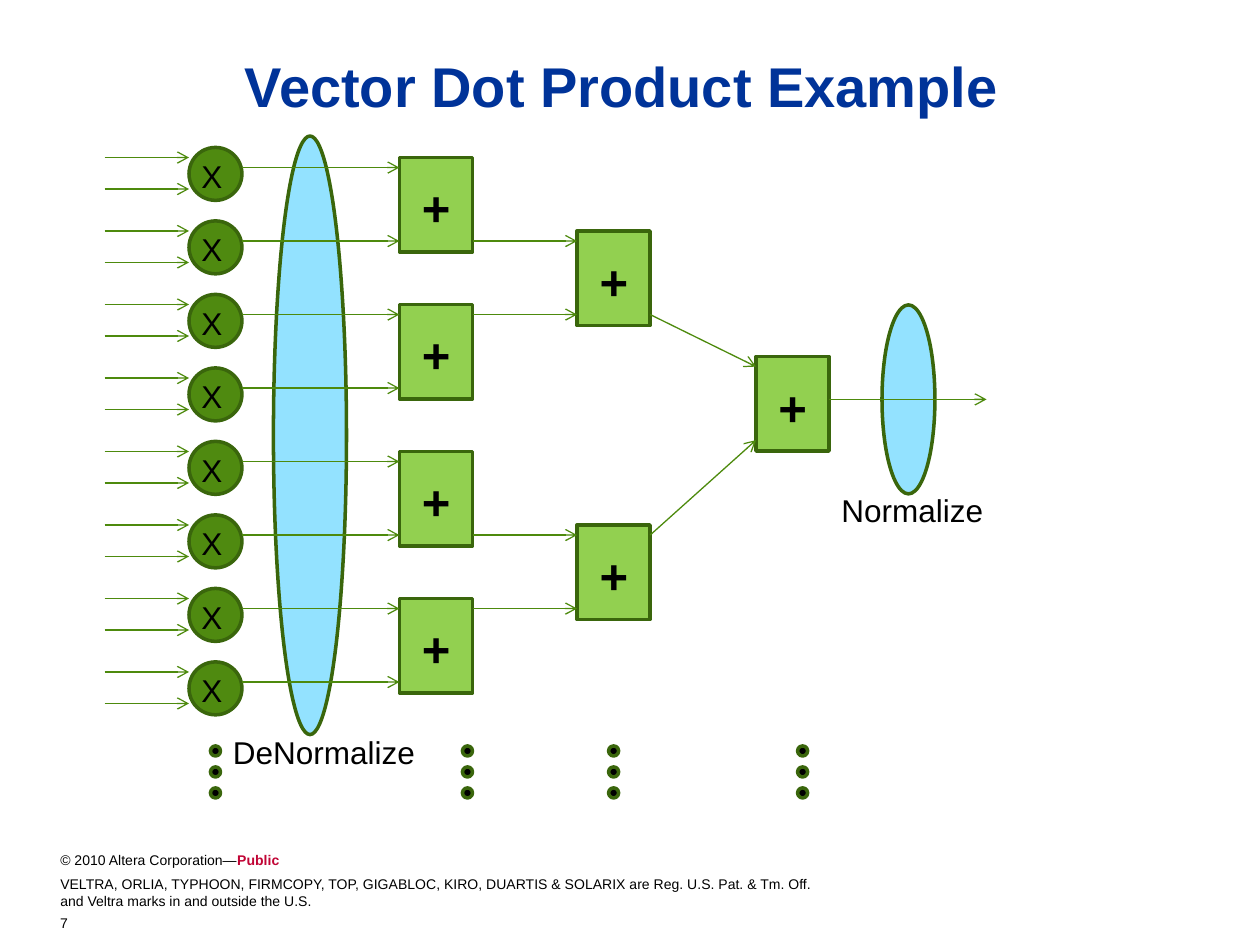
from lxml.etree import SubElement
from pptx import Presentation
from pptx.dml.color import RGBColor
from pptx.enum.shapes import MSO_CONNECTOR as CONNECTOR, MSO_SHAPE as SHAPE
from pptx.enum.text import MSO_ANCHOR as ANCHOR, PP_ALIGN as ALIGN
from pptx.oxml.ns import qn
from pptx.util import Inches, Pt

BLACK, NAVY, CRIMSON = "000000", "003399", "C10435"
SKY, LEAF, MOSS = "93E2FF", "92D050", "4F8A10"
OUTLINE, WIRE = "3A660C", "4D8A0D"

PITCH = 7 / 12               # distance between neighbouring products
MULTIPLIERS = 8
MULTIPLIER_SIZE = 0.42
ADDER_WIDTH, ADDER_HEIGHT = 0.58, 0.75
PORT_TOP = 0.08              # first port below the top of an adder
PORT_BOTTOM = PORT_TOP + PITCH


def color(hex_string):
    return RGBColor.from_string(hex_string)


def add_run(paragraph, text, size, hex_color=BLACK, bold=False):
    run = paragraph.add_run()
    run.text = text
    font = run.font
    font.name, font.size, font.bold = "Arial", Pt(size), bold
    font.color.rgb = color(hex_color)


def add_text(shapes, left, top, width, height):
    """Add an empty wrapping text box and return its first paragraph."""
    frame = shapes.add_textbox(*map(Inches, (left, top, width, height))).text_frame
    frame.word_wrap = True
    paragraph = frame.paragraphs[0]
    paragraph.line_spacing = 1.05
    return paragraph


def add_outlined(shapes, preset, left, top, width, height, fill):
    shape = shapes.add_shape(preset, *map(Inches, (left, top, width, height)))
    shape.shadow.inherit = False
    shape.fill.solid()
    shape.fill.fore_color.rgb = color(fill)
    shape.line.color.rgb = color(OUTLINE)
    shape.line.width = Pt(2)


def add_arrow(slide, x1, y1, x2, y2):
    arrow = slide.shapes.add_connector(CONNECTOR.STRAIGHT, *map(Inches, (x1, y1, x2, y2)))
    arrow.line.color.rgb = color(WIRE)
    arrow.line.width = Pt(0.75)
    SubElement(arrow.line._get_or_add_ln(), qn("a:tailEnd"), type="arrow")
    SubElement(arrow._element.spPr, qn("a:effectLst"))


def add_title(slide, left, top, width, height):
    title = slide.shapes.title
    title.left, title.top, title.width, title.height = map(Inches, (left, top, width, height))
    frame = title.text_frame
    frame.word_wrap = True
    frame.vertical_anchor = ANCHOR.TOP
    frame.margin_top = Inches(0.11)
    paragraph = frame.paragraphs[0]
    paragraph.alignment = ALIGN.CENTER
    add_run(paragraph, "Vector Dot Product Example", 32, NAVY, True)


def add_footer(slide, left, top):
    rights = add_text(slide.shapes, left, top, 4.65, 0.42)
    add_run(rights, "© 2010 Altera Corporation—", 8)
    add_run(rights, "Public", 8, CRIMSON, True)
    marks = add_text(slide.shapes, left, top + 0.19, 7.18, 0.37)
    add_run(marks, "VELTRA, ORLIA, TYPHOON, FIRMCOPY, TOP, GIGABLOC, KIRO, DUARTIS & SOLARIX "
                   "are Reg. U.S. Pat. & Tm. Off.", 8)
    marks.add_line_break()
    add_run(marks, "and Veltra marks in and outside the U.S.", 8)
    add_run(add_text(slide.shapes, left, top + 0.5, 0.76, 0.31), "7", 8)


def add_multiplier(slide, left, top):
    """Draw one multiplier with its two inputs."""
    group = slide.shapes.add_group_shape().shapes
    add_outlined(group, SHAPE.OVAL, left, top, MULTIPLIER_SIZE, MULTIPLIER_SIZE, MOSS)
    add_run(add_text(group, left, top + 0.01, 0.83, 0.5), "X", 18)
    for port in (0.08, 0.33):
        add_arrow(slide, left - 0.67, top + port, left, top + port)


def add_adder(slide, left, top):
    group = slide.shapes.add_group_shape().shapes
    add_outlined(group, SHAPE.RECTANGLE, left, top, ADDER_WIDTH, ADDER_HEIGHT, LEAF)
    add_run(add_text(group, left + 0.08, top + 0.09, 0.58, 0.57), "+", 28, bold=True)


def add_adder_stage(slide, left, top, count, source_right):
    """Stack adders two products apart, each fed by two level arrows."""
    for index in range(count):
        adder_top = top + index * PITCH * (8 / count)
        add_adder(slide, left, adder_top)
        for port in (PORT_TOP, PORT_BOTTOM):
            add_arrow(slide, source_right, adder_top + port, left, adder_top + port)


def add_adder_tree(slide, left, top):
    second, last = left + 1.41, left + 2.83
    second_top, last_top = top + PITCH, top + 1.58
    add_adder_stage(slide, left, top, 4, left - 1.25)
    add_adder_stage(slide, second, second_top, 2, left + ADDER_WIDTH)
    add_adder(slide, last, last_top)
    second_right = second + ADDER_WIDTH
    add_arrow(slide, second_right, second_top + PORT_BOTTOM, last, last_top + PORT_TOP)
    add_arrow(slide, second_right, second_top + 4 * PITCH + PORT_TOP,
              last, last_top + PORT_BOTTOM)
    output_y = last_top + 0.34
    add_arrow(slide, last + ADDER_WIDTH, output_y, last + 1.83, output_y)


def add_continuation(slide, left, top):
    """Draw three dots downwards: the column goes on."""
    for index in range(3):
        add_outlined(slide.shapes, SHAPE.OVAL, left, top + index / 6, 0.08, 0.08, BLACK)


def build():
    deck = Presentation()
    deck.slide_width, deck.slide_height = Inches(10), Inches(7.5)
    slide = deck.slides.add_slide(deck.slide_layouts[5])
    add_footer(slide, 0.38, 6.7)
    add_title(slide, 0.38, 0.3, 9.11, 1)

    add_outlined(slide.shapes, SHAPE.OVAL, 7, 2.42, 0.42, 1.5, SKY)
    add_outlined(slide.shapes, SHAPE.OVAL, 2.17, 1.08, 0.58, 4.75, SKY)
    for index in range(MULTIPLIERS):
        add_multiplier(slide, 1.5, 1.17 + index * PITCH)
    add_adder_tree(slide, 3.17, 1.25)
    for left in (1.67, 3.67, 4.83, 6.33):
        add_continuation(slide, left, 5.92)
    for label, left, top in (("Normalize", 6.58, 3.83), ("DeNormalize", 1.75, 5.75)):
        add_run(add_text(slide.shapes, left, top, 2.33, 0.5), label, 18)
    deck.save("out.pptx")


if __name__ == "__main__":
    build()
